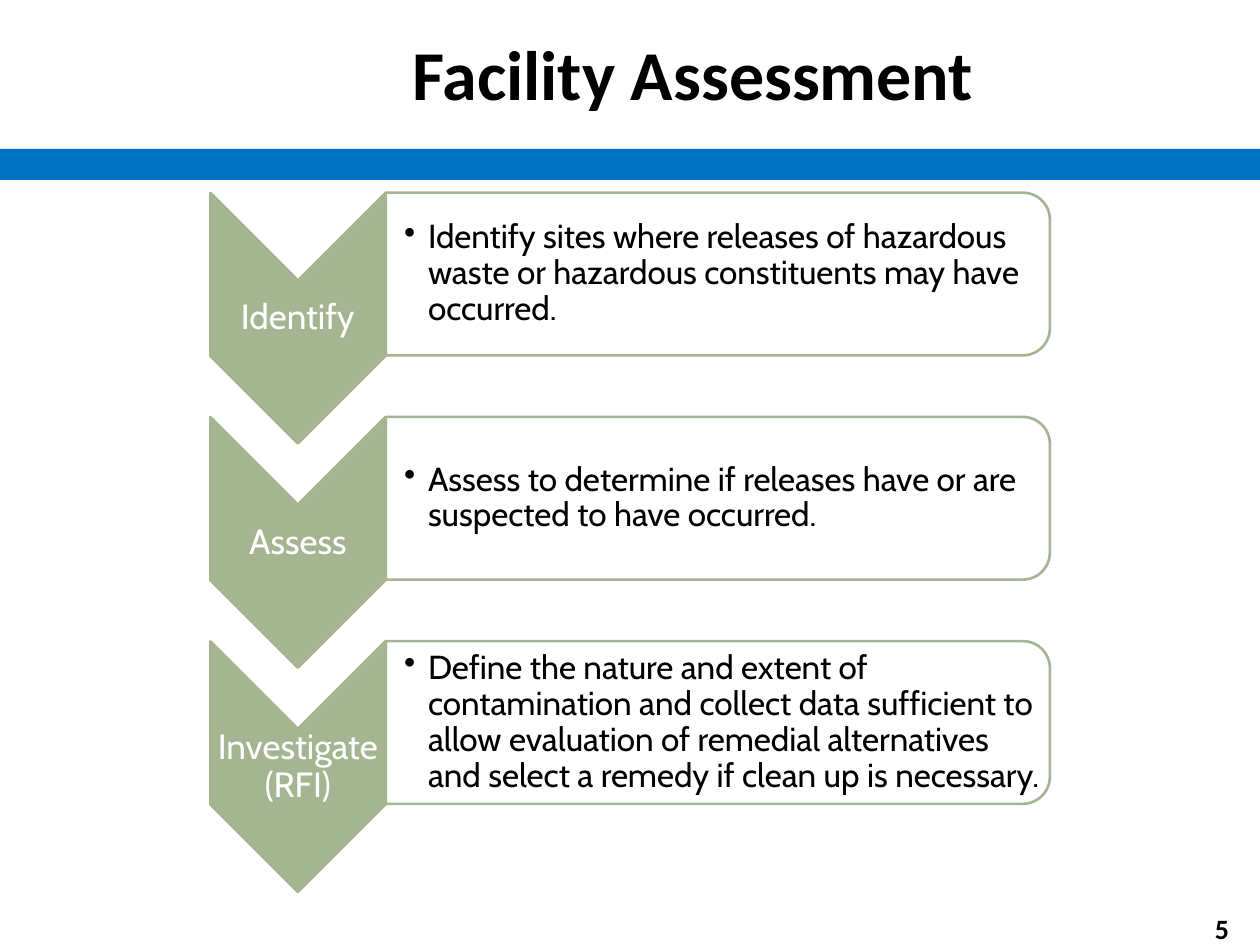
from lxml import etree
from pptx import Presentation
from pptx.dml.color import RGBColor
from pptx.enum.shapes import MSO_SHAPE
from pptx.enum.text import MSO_ANCHOR, PP_ALIGN
from pptx.oxml.ns import qn
from pptx.util import Cm, Pt

BLACK = RGBColor(0x00, 0x00, 0x00)
WHITE = RGBColor(0xFF, 0xFF, 0xFF)
BLUE = RGBColor(0x00, 0x70, 0xC0)
SAGE = RGBColor(0xA5, 0xB5, 0x92)
RECTANGLE = MSO_SHAPE.RECTANGLE
CHEVRON = MSO_SHAPE.CHEVRON
CARD = MSO_SHAPE.ROUND_2_SAME_RECTANGLE
CENTER, LEFT = PP_ALIGN.CENTER, PP_ALIGN.LEFT
MIDDLE = MSO_ANCHOR.MIDDLE

STEP_PITCH = 4.52
STEPS = [
    ("Identify",
     "Identify sites where releases of hazardous waste or hazardous "
     "constituents may have occurred."),
    ("Assess",
     "Assess to determine if releases have or are suspected to have occurred."),
    ("Investigate (RFI)",
     "Define the nature and extent of contamination and collect data "
     "sufficient to allow evaluation of remedial alternatives and select a "
     "remedy if clean up is necessary."),
]

presentation = Presentation()
presentation.slide_width = Cm(25.4)
presentation.slide_height = Cm(19.05)
slide = presentation.slides.add_slide(presentation.slide_layouts[6])


def add_shape(kind, left, top, width, height, fill, line=None, rotation=0):
    shape = slide.shapes.add_shape(kind, Cm(left), Cm(top), Cm(width), Cm(height))
    shape.shadow.inherit = False
    shape.rotation = rotation
    shape.fill.solid()
    shape.fill.fore_color.rgb = fill
    if line is None:
        shape.line.fill.background()
    else:
        shape.line.color.rgb = line
        shape.line.width = Pt(1.5)
    return shape


def add_text(text, left, top, width, height, size, font="Cabin", color=BLACK,
             bold=False, align=CENTER, margin=0.03, left_margin=0.03,
             line_spacing=None, bullet=False):
    box = slide.shapes.add_textbox(Cm(left), Cm(top), Cm(width), Cm(height))
    frame = box.text_frame
    frame.word_wrap = True
    frame.vertical_anchor = MIDDLE
    frame.margin_left = Cm(left_margin)
    frame.margin_top = frame.margin_right = frame.margin_bottom = Cm(margin)
    paragraph = frame.paragraphs[0]
    paragraph.text = text
    paragraph.alignment = align
    paragraph.line_spacing = line_spacing
    if bullet:
        properties = paragraph._p.get_or_add_pPr()
        properties.set("marL", str(Cm(0.48)))
        properties.set("indent", str(-Cm(0.48)))
        etree.SubElement(properties, qn("a:buChar")).set("char", "•")
    paragraph.font.name = font
    paragraph.font.size = Pt(size)
    paragraph.font.bold = bold
    paragraph.font.color.rgb = color


add_shape(RECTANGLE, 0, 3, 25.4, 0.63, BLUE)
add_text("5", 23.9, 18.36, 1.47, 0.69, 16, font="Calibri", bold=True)
add_text("Facility Assessment", 2.97, 0.1, 22, 2.74, 40, font="Calibri", bold=True)

for index, (label, description) in enumerate(STEPS):
    offset = index * STEP_PITCH
    add_shape(CHEVRON, 3.48, 4.65 + offset, 5.05, 3.53, SAGE, SAGE, rotation=90)
    add_text(label, 4.24, 5.66 + offset, 3.53, 1.52, 20, color=WHITE,
             line_spacing=0.9)
    card = add_shape(CARD, 12.83, -1.17 + offset, 3.28, 13.39, WHITE, SAGE,
                     rotation=90)
    card_color = card.fill._xPr.find(qn("a:solidFill"))[0]
    etree.SubElement(card_color, qn("a:alpha")).set("val", "90000")
    add_text(description, 7.77, 4.04 + offset, 13.25, 2.97, 19, align=LEFT,
             left_margin=0.38, line_spacing=0.9, bullet=True)

presentation.save("out.pptx")
